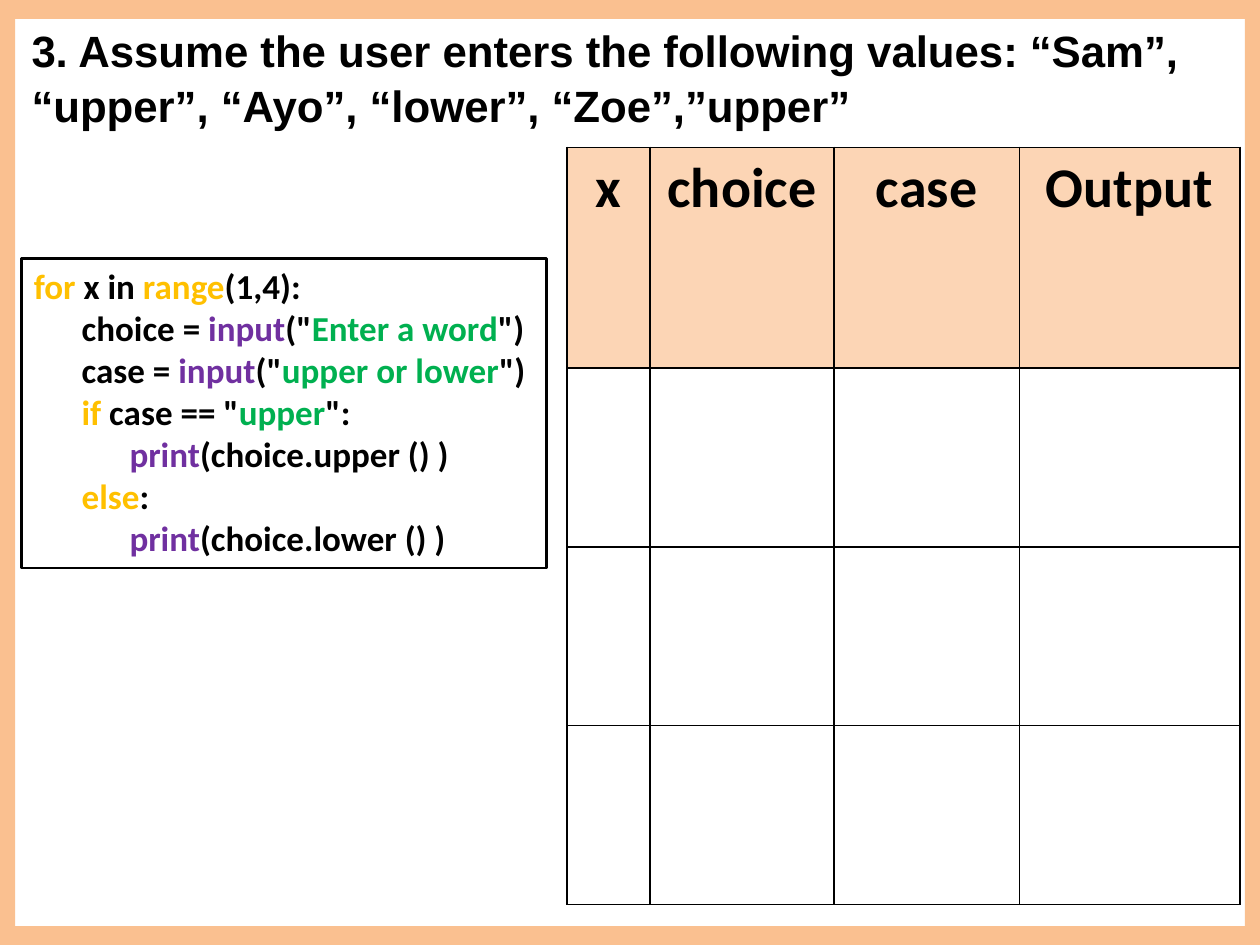
from dataclasses import dataclass

from lxml.etree import SubElement
from pptx import Presentation
from pptx.dml.color import RGBColor
from pptx.enum.shapes import MSO_SHAPE as Shape
from pptx.enum.text import MSO_ANCHOR as Anchor, PP_ALIGN as Align
from pptx.oxml.ns import qn
from pptx.util import Inches, Pt

HEADING = ("3. Assume the user enters the following values: “Sam”, "
           "“upper”, “Ayo”, “lower”, “Zoe”,”upper”")
COLUMNS = [("x", 0.66), ("choice", 1.46), ("case", 1.47), ("Output", 1.75)]
ROWS = [1.75] + [1.42] * 3

# Each line: depth, then (role, text) pieces
CODE = [
    (0, [("key", "for"), ("ink", " x in "), ("key", "range"), ("ink", "(1,4):")]),
    (1, [("ink", "choice = "), ("call", "input"), ("ink", '("'),
         ("string", "Enter a word"), ("ink", '")')]),
    (1, [("ink", "case = "), ("call", "input"), ("ink", '("'),
         ("string", "upper or lower"), ("ink", '")')]),
    (1, [("key", "if"), ("ink", ' case == "'), ("string", "upper"), ("ink", '":')]),
    (2, [("call", "print"), ("ink", "(choice.upper () )")]),
    (1, [("key", "else"), ("ink", ":")]),
    (2, [("call", "print"), ("ink", "(choice.lower () )")]),
]


@dataclass(frozen=True)
class Theme:
    ink: str = "000000"
    key: str = "FFC000"
    call: str = "7030A0"
    string: str = "00B050"
    frame: str = "FAC090"
    header: str = "FCD5B5"
    paper: str = "FFFFFF"
    title_font: str = "Arial"
    text_font: str = "Calibri"
    title_size: int = 25
    table_size: int = 32
    code_size: int = 20


THEME = Theme()
WIDTH, HEIGHT = 10, 7.5
BAR, SIDE = 0.15, 0.12
STEP = 0.38


def box(left, top, width, height):
    return [Inches(v) for v in (left, top, width, height)]


def paint(fill, color):
    fill.solid()
    fill.fore_color.rgb = RGBColor.from_string(color)


def style(run, size, font=THEME.text_font, color=THEME.ink):
    run.font.size, run.font.name, run.font.bold = Pt(size), font, True
    run.font.color.rgb = RGBColor.from_string(color)


def indent(para, depth):
    props = para._p.get_or_add_pPr()
    props.set("marL", str(Inches(STEP * depth)))
    props.set("indent", "0")
    return props


def add_frame(slide):
    inner = HEIGHT - 2 * BAR
    for area in [(0, 0, WIDTH, BAR), (0, HEIGHT - BAR, WIDTH, BAR),
                 (0, BAR, SIDE, inner), (WIDTH - SIDE, BAR, SIDE, inner)]:
        bar = slide.shapes.add_shape(Shape.RECTANGLE, *box(*area))
        bar.shadow.inherit = False
        paint(bar.fill, THEME.frame)
        bar.line.fill.background()


def add_heading(slide):
    title = slide.shapes.title
    title.element.getparent().remove(title.element)
    body = slide.placeholders[1]
    body.left, body.top, body.width, body.height = box(0.25, 0.17, 9.67, 7.17)
    frame = body.text_frame
    frame.margin_left = frame.margin_top = 0
    frame.text = HEADING
    para = frame.paragraphs[0]
    para.line_spacing, para.space_before, para.space_after = 1.05, Pt(0), Pt(14)
    SubElement(indent(para, 0), qn("a:buNone"))
    style(para.runs[0], THEME.title_size, THEME.title_font)


def add_borders(cell):
    props = cell._tc.get_or_add_tcPr()
    for spot, side in enumerate(("lnL", "lnR", "lnT", "lnB")):
        line = props.makeelement(qn(f"a:{side}"), {"w": str(Pt(1))})
        fill = SubElement(line, qn("a:solidFill"))
        SubElement(fill, qn("a:srgbClr"), val=THEME.ink)
        props.insert(spot, line)


def add_trace(slide):
    area = box(4.5, 1.17, sum(w for _, w in COLUMNS), sum(ROWS))
    table = slide.shapes.add_table(len(ROWS), len(COLUMNS), *area).table
    for row, height in zip(table.rows, ROWS):
        row.height = Inches(height)
    for col, (name, width) in enumerate(COLUMNS):
        table.columns[col].width = Inches(width)
        for row in range(len(ROWS)):
            cell = table.cell(row, col)
            paint(cell.fill, THEME.paper if row else THEME.header)
            add_borders(cell)
        head = table.cell(0, col)
        head.text = name
        para = head.text_frame.paragraphs[0]
        para.alignment = Align.CENTER
        style(para.runs[0], THEME.table_size)


def add_code(slide):
    panel = slide.shapes.add_shape(Shape.RECTANGLE, *box(0.17, 2.05, 4.17, 2.46))
    panel.shadow.inherit = False
    panel.fill.background()
    paint(panel.line.fill, THEME.ink)
    panel.line.width = Pt(1.5)
    frame = panel.text_frame
    frame.word_wrap, frame.vertical_anchor = True, Anchor.TOP
    for num, (depth, parts) in enumerate(CODE):
        para = frame.add_paragraph() if num else frame.paragraphs[0]
        para.alignment = Align.LEFT
        indent(para, depth)
        for role, text in parts:
            run = para.add_run()
            run.text = text
            style(run, THEME.code_size, color=getattr(THEME, role))


def main():
    deck = Presentation()
    deck.slide_width, deck.slide_height = Inches(WIDTH), Inches(HEIGHT)
    slide = deck.slides.add_slide(deck.slide_layouts[1])
    paint(slide.background.fill, THEME.paper)
    for add in (add_frame, add_heading, add_trace, add_code):
        add(slide)
    deck.save("out.pptx")


if __name__ == "__main__":
    main()
